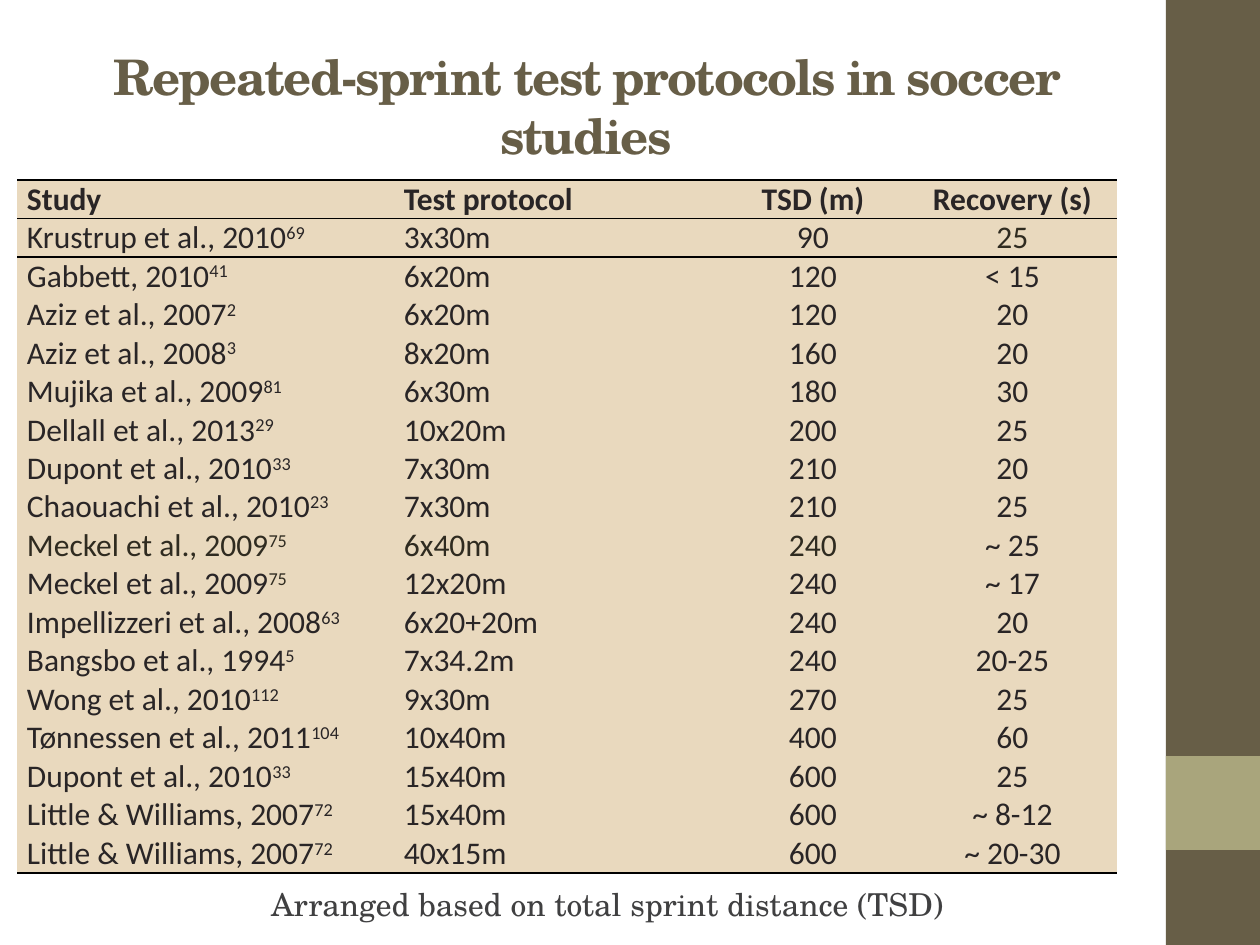
from lxml.etree import SubElement
from pptx import Presentation
from pptx.dml.color import RGBColor
from pptx.enum.shapes import MSO_SHAPE as Shape
from pptx.enum.text import MSO_ANCHOR as Anchor, MSO_AUTO_SIZE as AutoSize, PP_ALIGN as Align
from pptx.oxml.ns import qn
from pptx.util import Pt

PX = 914400 // 126
OLIVE = RGBColor(0x67, 0x5E, 0x47)
SAGE = RGBColor(0xA9, 0xA5, 0x7C)
SAND = RGBColor(0xE9, 0xD9, 0xBE)
INK = RGBColor(0x29, 0x25, 0x26)
DARK_OLIVE = RGBColor(0x2F, 0x2B, 0x20)
GREY = RGBColor(0x40, 0x40, 0x41)
SERIF, SANS = "TeX Gyre Schola", "Calibri"
NO_GRID_STYLE = "{2D5ABB26-0587-4C30-8999-92F81FD0307C}"

HEADINGS = ("Study", "Test protocol", "TSD (m)", "Recovery (s)")
# study, reference number, protocol, total sprint distance, recovery
STUDIES = [
    ("Krustrup et al., 2010", "69", "3x30m", "90", "25"),
    ("Gabbett, 2010", "41", "6x20m", "120", "< 15"),
    ("Aziz et al., 2007", "2", "6x20m", "120", "20"),
    ("Aziz et al., 2008", "3", "8x20m", "160", "20"),
    ("Mujika et al., 2009", "81", "6x30m", "180", "30"),
    ("Dellall et al., 2013", "29", "10x20m", "200", "25"),
    ("Dupont et al., 2010", "33", "7x30m", "210", "20"),
    ("Chaouachi et al., 2010", "23", "7x30m", "210", "25"),
    ("Meckel et al., 2009", "75", "6x40m", "240", "~ 25"),
    ("Meckel et al., 2009", "75", "12x20m", "240", "~ 17"),
    ("Impellizzeri et al., 2008", "63", "6x20+20m", "240", "20"),
    ("Bangsbo et al., 1994", "5", "7x34.2m", "240", "20-25"),
    ("Wong et al., 2010", "112", "9x30m", "270", "25"),
    ("Tønnessen et al., 2011", "104", "10x40m", "400", "60"),
    ("Dupont et al., 2010", "33", "15x40m", "600", "25"),
    ("Little & Williams, 2007", "72", "15x40m", "600", "~ 8-12"),
    ("Little & Williams, 2007", "72", "40x15m", "600", "~ 20-30"),
]
DARK_OLIVE_CELLS = {(1, 3), (9, 0), (9, 1), (9, 2)}
COLUMN_WIDTHS = (377, 324, 190, 209)
ROW_HEIGHT = 38


def add_rule(cell, side):
    """Draw a 1 pt black border on one side of a cell ("lnT" or "lnB")."""
    line = SubElement(cell._tc.get_or_add_tcPr(), qn(f"a:{side}"), w=str(Pt(1)))
    fill = SubElement(line, qn("a:solidFill"))
    SubElement(fill, qn("a:srgbClr"), val="000000")


def style_paragraph(paragraph, name, size, color, align, bold=False):
    paragraph.alignment = align
    font = paragraph.font
    font.name, font.size, font.bold = name, Pt(size), bold
    font.color.rgb = color


deck = Presentation()
deck.slide_width, deck.slide_height = 1260 * PX, 945 * PX
page = deck.slides.add_slide(deck.slide_layouts[5])

# Side band
for top, height, color in ((0, 945, OLIVE), (756, 94, SAGE)):
    band = page.shapes.add_shape(Shape.RECTANGLE, 1166 * PX, top * PX, 94 * PX, height * PX)
    band.shadow.inherit = False
    band.fill.solid()
    band.fill.fore_color.rgb = color
    band.line.fill.background()

# Title
title = page.shapes.title
title.left, title.top, title.width, title.height = 15 * PX, 57 * PX, 1142 * PX, 97 * PX
title.text_frame.text = "Repeated-sprint test protocols in soccer studies"
title.text_frame.word_wrap = True
title.text_frame.auto_size = AutoSize.NONE
title.text_frame.vertical_anchor = Anchor.MIDDLE
heading = title.text_frame.paragraphs[0]
style_paragraph(heading, SERIF, 28, OLIVE, Align.CENTER, bold=True)
heading.runs[0].font._element.set("spc", "-100")

# Table of studies
row_count = len(STUDIES) + 1
table = page.shapes.add_table(
    row_count, len(HEADINGS), 17 * PX, 180 * PX,
    sum(COLUMN_WIDTHS) * PX, row_count * ROW_HEIGHT * PX).table
table._tbl.tblPr.find(qn("a:tableStyleId")).text = NO_GRID_STYLE
table.horz_banding = False
for column, width in zip(table.columns, COLUMN_WIDTHS):
    column.width = width * PX
for row in table.rows:
    row.height = ROW_HEIGHT * PX

rows = [HEADINGS] + [(study, *values) for study, _, *values in STUDIES]
for r, texts in enumerate(rows):
    for c, text in enumerate(texts):
        cell = table.cell(r, c)
        cell.margin_left = cell.margin_right = 10 * PX
        cell.margin_top = cell.margin_bottom = 0
        cell.vertical_anchor = Anchor.BOTTOM if r == 0 else Anchor.TOP
        if r <= 1:
            add_rule(cell, "lnT")
        if r in (0, row_count - 1):
            add_rule(cell, "lnB")
        cell.fill.solid()
        cell.fill.fore_color.rgb = SAND
        paragraph = cell.text_frame.paragraphs[0]
        paragraph.add_run().text = text
        if r and c == 0:
            reference = paragraph.add_run()
            reference.text = STUDIES[r - 1][1]
            reference.font._element.set("baseline", "30000")
            if r == 10:
                reference.font.color.rgb = DARK_OLIVE
        color = DARK_OLIVE if (r, c) in DARK_OLIVE_CELLS else INK
        style_paragraph(paragraph, SANS, 18, color,
                        Align.LEFT if c < 2 else Align.CENTER, bold=r == 0)

# Caption
caption = page.shapes.add_textbox(227 * PX, 885 * PX, 761 * PX, 88 * PX)
frame = caption.text_frame
frame.word_wrap = True
frame.margin_left = frame.margin_right = frame.margin_top = frame.margin_bottom = 0
frame.text = "Arranged based on total sprint distance (TSD)"
style_paragraph(frame.paragraphs[0], SERIF, 18, GREY, Align.CENTER)

deck.save("out.pptx")
